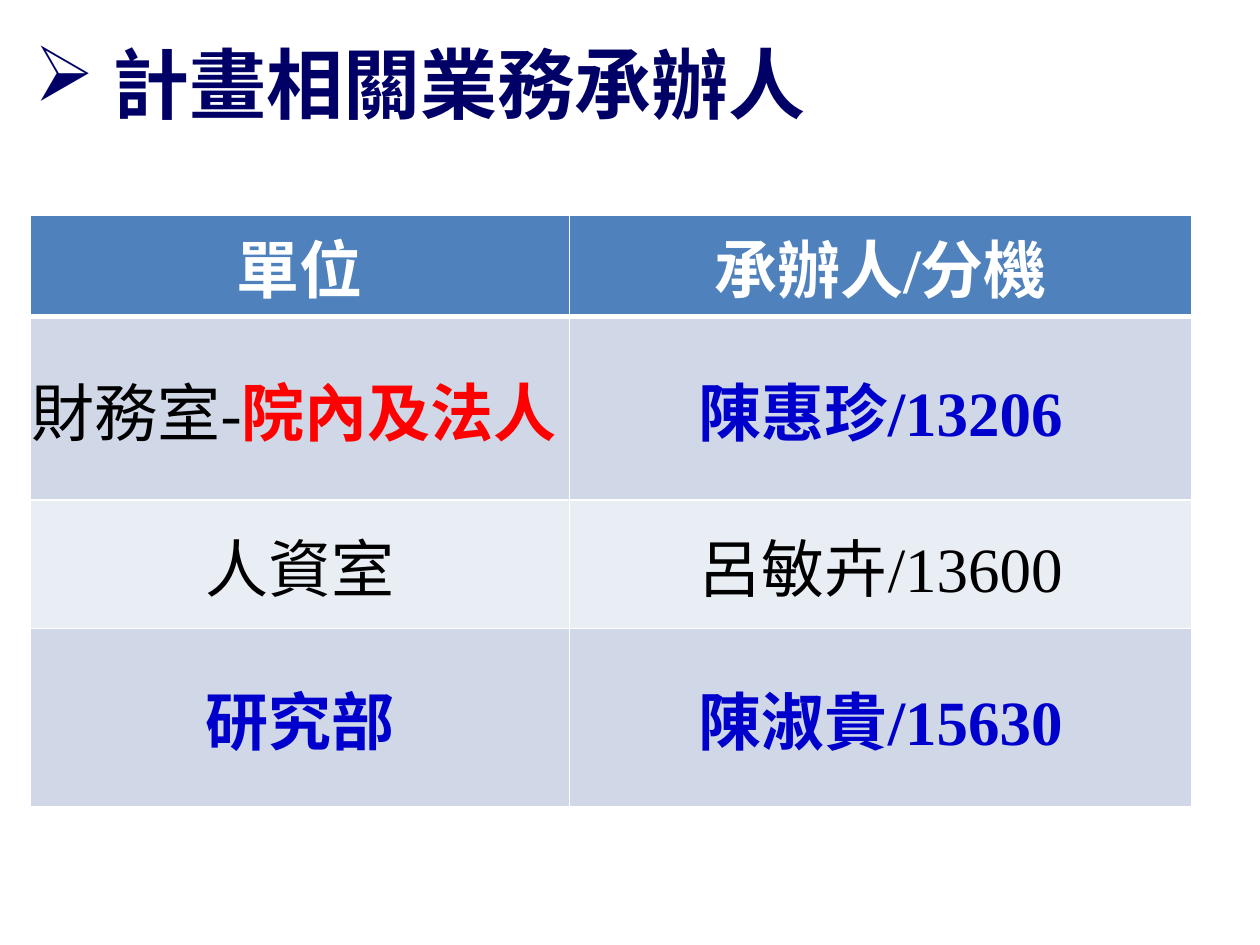
from lxml.etree import SubElement
from pptx import Presentation
from pptx.dml.color import RGBColor
from pptx.enum.text import MSO_ANCHOR, PP_ALIGN
from pptx.oxml import parse_xml
from pptx.oxml.ns import nsdecls, qn
from pptx.util import Inches, Pt

NAVY = RGBColor(0x00, 0x00, 0x66)
BLUE = RGBColor(0x00, 0x00, 0xCC)
RED = RGBColor(0xFF, 0x00, 0x00)
BLACK = RGBColor(0x00, 0x00, 0x00)
WHITE = RGBColor(0xFF, 0xFF, 0xFF)
HEAD = RGBColor(0x4F, 0x81, 0xBD)
DARK = RGBColor(0xD0, 0xD8, 0xE8)
LIGHT = RGBColor(0xE9, 0xED, 0xF4)

HAN, LATIN = "Noto Sans CJK SC", "Times New Roman"
COLS, ROWS = 100, 75  # slide grid


class Deck:
    def __init__(self):
        self.prs = Presentation()
        self.prs.slide_width, self.prs.slide_height = Inches(10), Inches(7.5)
        self.slide = self.prs.slides.add_slide(self.prs.slide_layouts[5])

    def col(self, n):
        return round(self.prs.slide_width * n / COLS)

    def row(self, n):
        return round(self.prs.slide_height * n / ROWS)

    def run(self, para, text, color, bold, size, face):
        run = para.add_run()
        run.text = text
        for key, val in {"size": Pt(size), "bold": bold, "name": face}.items():
            setattr(run.font, key, val)
        run.font.color.rgb = color
        SubElement(run.font._element, qn("a:ea"), typeface=HAN)

    def title(self, text, left, top, width, height):
        box = self.slide.shapes.title
        place = {"left": self.col(left), "top": self.row(top),
                 "width": self.col(width), "height": self.row(height)}
        for key, val in place.items():
            setattr(box, key, val)
        box.text_frame.vertical_anchor = MSO_ANCHOR.MIDDLE
        para = box.text_frame.paragraphs[0]
        para.alignment = PP_ALIGN.LEFT
        self.run(para, text, NAVY, True, 44, HAN)
        # Hanging arrow bullet
        props = para._p.get_or_add_pPr()
        props.set("marL", str(self.col(6.2)))
        props.set("indent", str(-self.col(6.2)))
        SubElement(props, qn("a:buChar"), char="➢")

    def edge(self, cell, widths):
        props = cell._tc.get_or_add_tcPr()
        for spot, (side, width) in enumerate(widths.items()):
            props.insert(spot, parse_xml(
                f'<a:ln{side} {nsdecls("a")} w="{Pt(width)}"><a:solidFill>'
                f'<a:srgbClr val="{WHITE}"/></a:solidFill></a:ln{side}>'))

    def cell(self, cell, runs, fill, align, top, base):
        style = {"vertical_anchor": MSO_ANCHOR.MIDDLE,
                 "margin_left": Inches(0.01), "margin_right": Inches(0.01),
                 "margin_top": Inches(0.01), "margin_bottom": 0}
        for key, val in style.items():
            setattr(cell, key, val)
        cell.fill.solid()
        cell.fill.fore_color.rgb = fill
        self.edge(cell, {"L": 1, "R": 1, "T": top, "B": base})
        para = cell.text_frame.paragraphs[0]
        para.alignment = align
        for text, color, bold in runs:
            self.run(para, text, color, bold, 36, LATIN)

    def table(self, data, fills, left, top, wide, high):
        grid = self.slide.shapes.add_table(
            len(high), len(wide), self.col(left), self.row(top),
            self.col(sum(wide)), self.row(sum(high))).table
        for col, size in zip(grid.columns, wide):
            col.width = self.col(size)
        for row, size in zip(grid.rows, high):
            row.height = self.row(size)
        for r, line in enumerate(data):
            for c, runs in enumerate(line):
                # Only the mixed-colour cell is left-aligned
                align = PP_ALIGN.LEFT if len(runs) > 1 else PP_ALIGN.CENTER
                self.cell(grid.cell(r, c), runs, fills[r], align,
                          3 if r == 1 else 1, 3 if r == 0 else 1)


def main():
    deck = Deck()

    # Title
    deck.title("計畫相關業務承辦人", 1.7, 1.7, 90, 9.8)

    # Contact table: each cell is a list of (text, colour, bold)
    data = [
        [[("單位", WHITE, True)], [("承辦人/分機", WHITE, True)]],
        [[("財務室-", BLACK, False), ("院內及法人", RED, True)],
         [("陳惠珍/13206", BLUE, True)]],
        [[("人資室", BLACK, False)], [("呂敏卉/13600", BLACK, False)]],
        [[("研究部", BLUE, True)], [("陳淑貴/15630", BLUE, True)]],
    ]
    deck.table(data, [HEAD, DARK, LIGHT, DARK], 2.4, 17.1,
               [42.8, 49.4], [8, 11.7, 10.2, 14.2])

    deck.prs.save("out.pptx")


if __name__ == "__main__":
    main()
